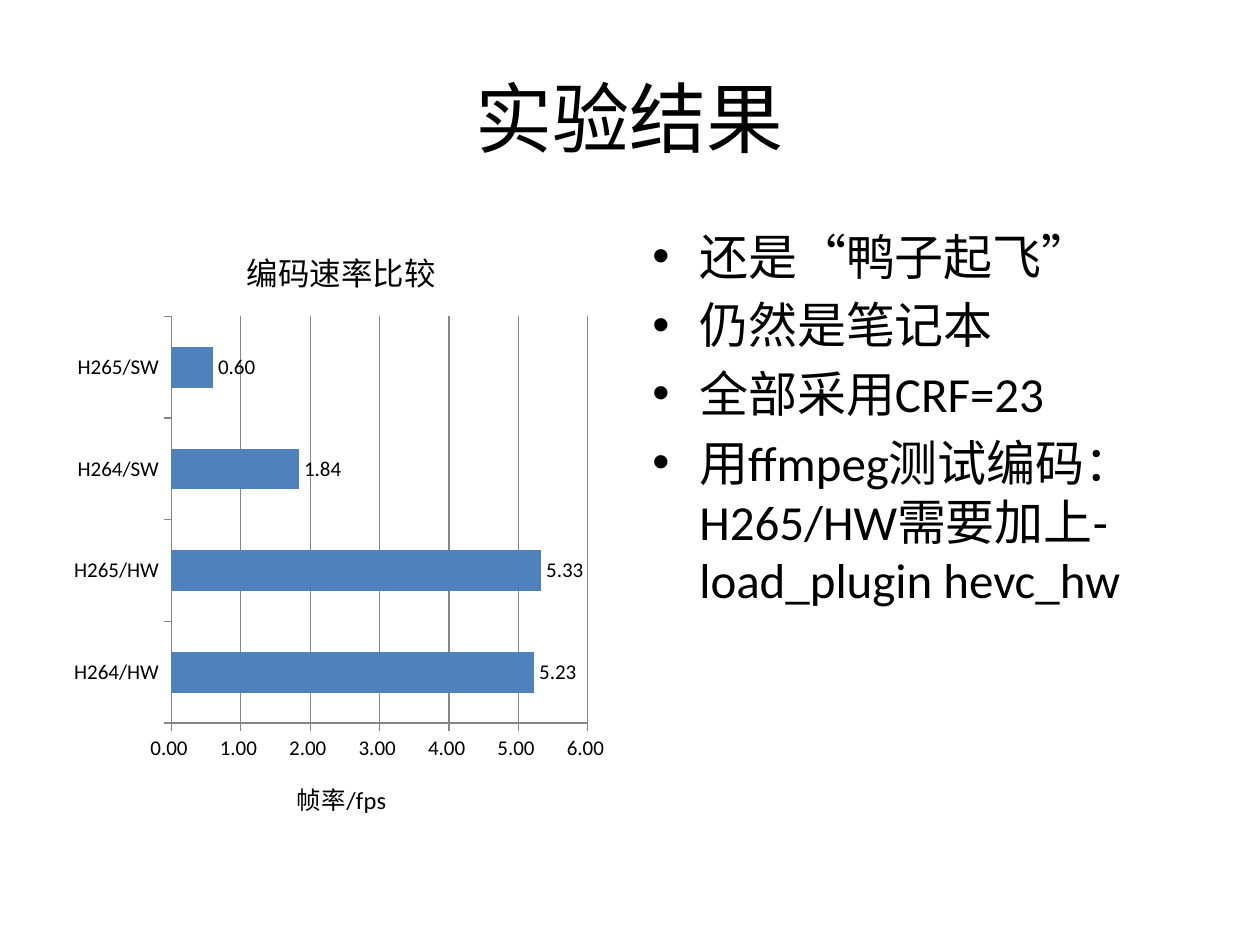
from lxml.etree import SubElement
from pptx import Presentation
from pptx.chart.data import CategoryChartData
from pptx.dml.color import RGBColor
from pptx.enum.chart import XL_CHART_TYPE, XL_LABEL_POSITION, XL_TICK_MARK
from pptx.enum.text import MSO_ANCHOR, PP_ALIGN
from pptx.oxml.ns import qn
from pptx.util import Pt

PX = 914400 // 126
FONT = "Calibri"
BLACK, BAR_BLUE, AXIS_GREY = "000000", "4F81BD", "868686"
NUMBER_FORMAT = "0.00_ "
MARGIN, CONTENT_TOP, CONTENT_WIDTH, CONTENT_HEIGHT = 63, 220, 557, 624
SLIDE_WIDTH, SLIDE_HEIGHT = 1260, 945
TITLE_TOP, TITLE_HEIGHT = 38, 158
BULLET_INDENT = 47

TITLE = "实验结果"
CHART_TITLE = "编码速率比较"
AXIS_TITLE = "帧率/fps"
FRAME_RATES = [("H264/HW", 5.23), ("H265/HW", 5.33), ("H264/SW", 1.84), ("H265/SW", 0.60)]
POINTS = [
    "还是“鸭子起飞”",
    "仍然是笔记本",
    "全部采用CRF=23",
    "用ffmpeg测试编码：H265/HW需要加上-load_plugin hevc_hw",
]


def color(value):
    return RGBColor.from_string(value)


def style_font(font, size):
    font.name, font.size, font.bold = FONT, Pt(size), False
    font.color.rgb = color(BLACK)


def add_run(paragraph, text, size):
    run = paragraph.add_run()
    run.text = text
    style_font(run.font, size)


def add_text_frame(slide, *box):
    frame = slide.shapes.add_textbox(*(length * PX for length in box)).text_frame
    frame.word_wrap = True
    return frame


def add_title(slide):
    frame = add_text_frame(slide, MARGIN, TITLE_TOP, SLIDE_WIDTH - 2 * MARGIN, TITLE_HEIGHT)
    frame.vertical_anchor = MSO_ANCHOR.MIDDLE
    paragraph = frame.paragraphs[0]
    paragraph.alignment = PP_ALIGN.CENTER
    add_run(paragraph, TITLE, 44)


def add_points(slide):
    left = SLIDE_WIDTH - MARGIN - CONTENT_WIDTH
    frame = add_text_frame(slide, left, CONTENT_TOP, CONTENT_WIDTH, CONTENT_HEIGHT)
    for index, text in enumerate(POINTS):
        paragraph = frame.add_paragraph() if index else frame.paragraphs[0]
        paragraph.space_before = Pt(5.6)
        properties = paragraph._p.get_or_add_pPr()
        properties.set("marL", str(BULLET_INDENT * PX))
        properties.set("indent", str(-BULLET_INDENT * PX))
        SubElement(properties, qn("a:buFont"), typeface="Arial")
        SubElement(properties, qn("a:buChar"), char="•")
        add_run(paragraph, text, 28)


def add_rate_chart(slide):
    data = CategoryChartData(number_format=NUMBER_FORMAT)
    data.categories = [name for name, _ in FRAME_RATES]
    data.add_series("Series 1", [rate for _, rate in FRAME_RATES])
    box = (MARGIN, CONTENT_TOP, CONTENT_WIDTH, CONTENT_HEIGHT)
    chart = slide.shapes.add_chart(
        XL_CHART_TYPE.BAR_CLUSTERED, *(length * PX for length in box), data
    ).chart
    style_font(chart.font, 18)
    chart.has_legend = False
    category_axis, value_axis = chart.category_axis, chart.value_axis
    for titled, text, size in ((chart, CHART_TITLE, 18), (value_axis, AXIS_TITLE, 14)):
        titled.has_title = True
        title = titled.chart_title if titled is chart else titled.axis_title
        add_run(title.text_frame.paragraphs[0], text, size)
    for axis in (category_axis, value_axis):
        axis.major_tick_mark = XL_TICK_MARK.OUTSIDE
        axis.minor_tick_mark = XL_TICK_MARK.NONE
        axis.format.line.color.rgb = color(AXIS_GREY)
        style_font(axis.tick_labels.font, 12)
    category_axis.has_major_gridlines = False
    value_axis.has_major_gridlines = True
    value_axis.major_gridlines.format.line.color.rgb = color(AXIS_GREY)
    value_axis.tick_labels.number_format = NUMBER_FORMAT
    value_axis.tick_labels.number_format_is_linked = False

    plot = chart.plots[0]
    plot.gap_width = 150
    plot.vary_by_categories = False
    series = plot.series[0]
    series.format.fill.solid()
    series.format.fill.fore_color.rgb = color(BAR_BLUE)
    labels = series.data_labels
    labels.show_value = True
    labels.position = XL_LABEL_POSITION.OUTSIDE_END
    labels.number_format = NUMBER_FORMAT
    labels.number_format_is_linked = False
    style_font(labels.font, 12)


def main():
    """Build the slide comparing encoding speeds."""
    presentation = Presentation()
    presentation.slide_width = SLIDE_WIDTH * PX
    presentation.slide_height = SLIDE_HEIGHT * PX
    slide = presentation.slides.add_slide(presentation.slide_layouts[6])
    add_title(slide)
    add_rate_chart(slide)
    add_points(slide)
    presentation.save("out.pptx")


if __name__ == "__main__":
    main()
